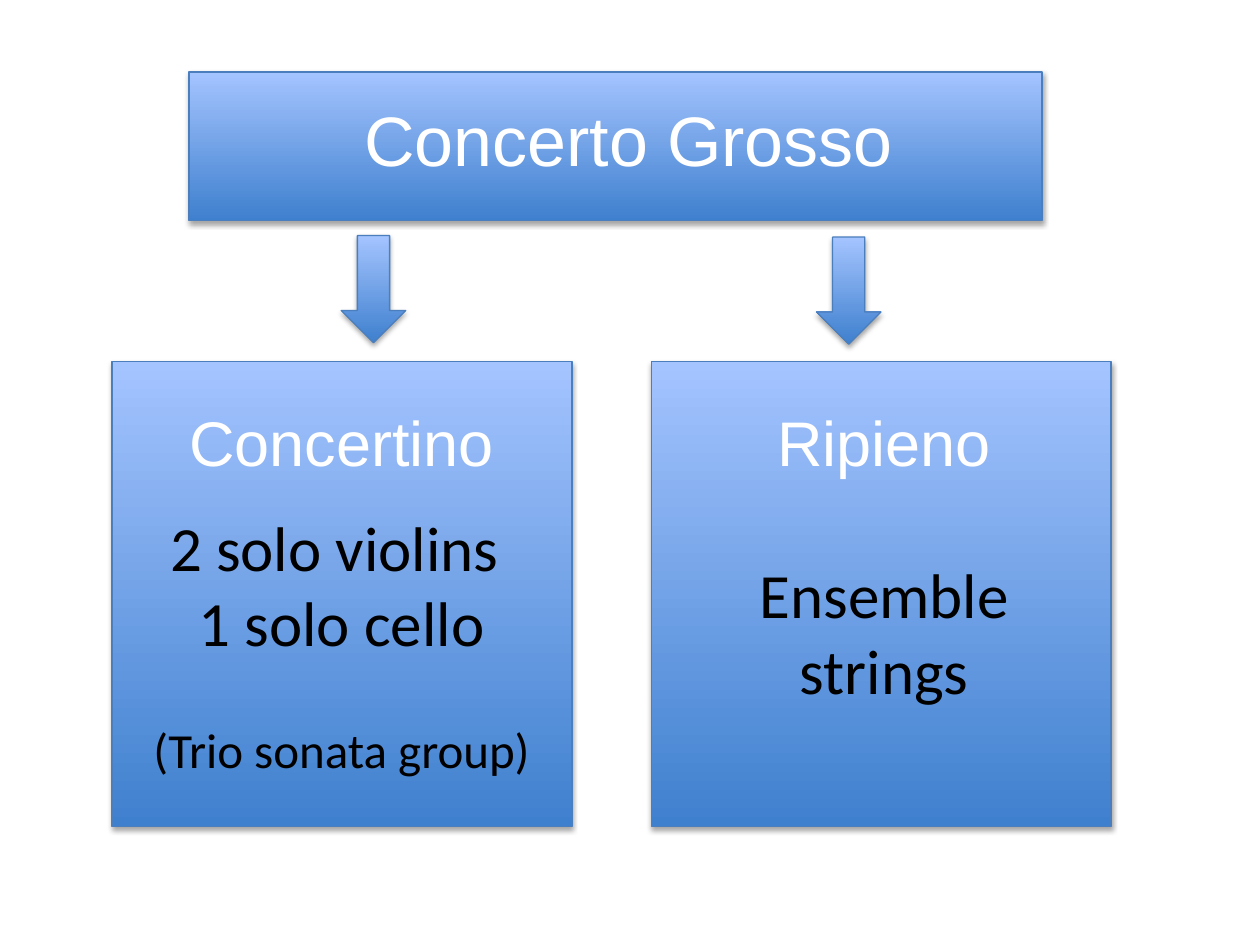
from dataclasses import dataclass

from lxml.etree import SubElement
from pptx import Presentation
from pptx.dml.color import RGBColor
from pptx.enum.shapes import MSO_SHAPE
from pptx.enum.text import MSO_AUTO_SIZE, PP_ALIGN
from pptx.oxml.ns import qn
from pptx.util import Cm, Pt


@dataclass(frozen=True)
class Theme:
    dark: RGBColor = RGBColor.from_string("3F80CE")
    light: RGBColor = RGBColor.from_string("A4C4FF")
    edge: RGBColor = RGBColor.from_string("4B7EBC")
    white: RGBColor = RGBColor.from_string("FFFFFF")
    black: RGBColor = RGBColor.from_string("000000")
    heading: str = "Arial"
    body: str = "Calibri"
    title_size: int = 40
    text_size: int = 36
    note_size: int = 28


theme = Theme()


def add_block(s, kind, left, top, width, height):
    sp = s.shapes.add_shape(kind, Cm(left), Cm(top), Cm(width), Cm(height))
    sp.fill.gradient()
    sp.fill.gradient_angle = 90
    for stop, color in zip(sp.fill.gradient_stops, (theme.dark, theme.light)):
        stop.color.rgb = color
    sp.line.color.rgb = theme.edge
    sp.line.width = Pt(0.75)
    sp.shadow.inherit = False
    effects = sp._element.spPr.find(qn("a:effectLst"))
    shadow = SubElement(effects, qn("a:outerShdw"), blurRad=str(Pt(3.1)),
                        dist=str(Pt(1.8)), dir="5400000", rotWithShape="0")
    color = SubElement(shadow, qn("a:srgbClr"), val=str(theme.black))
    SubElement(color, qn("a:alpha"), val="35000")


def add_text(s, left, top, width, height, lines):
    tf = s.shapes.add_textbox(Cm(left), Cm(top), Cm(width), Cm(height)).text_frame
    tf.word_wrap = True
    tf.auto_size = MSO_AUTO_SIZE.SHAPE_TO_FIT_TEXT
    for i, (text, font, size, color, gap) in enumerate(lines):
        p = tf.add_paragraph() if i else tf.paragraphs[0]
        p.text = text
        p.alignment = PP_ALIGN.CENTER
        p.font.name = font
        p.font.size = Pt(size)
        p.font.color.rgb = color
        if gap:
            p.space_before = Pt(gap)


prs = Presentation()
prs.slide_width, prs.slide_height = Cm(25.4), Cm(19.05)
s = prs.slides.add_slide(prs.slide_layouts[6])

add_block(s, MSO_SHAPE.RECTANGLE, 3.81, 1.45, 17.2, 3)
add_text(s, 4.72, 1.83, 15.9, 1.96,
         [("Concerto Grosso", theme.heading, theme.title_size, theme.white, 0)])

groups = [
    (2.26, 2.34, 9.4, "Concertino", [
        ("2 solo violins ", theme.text_size, 17),
        ("1 solo cello", theme.text_size, 0),
        ("(Trio sonata group)", theme.note_size, 34),
    ]),
    (13.13, 13.28, 7.95, "Ripieno", [("Ensemble strings", theme.text_size, 44)]),
]
for panel_left, text_left, text_height, heading, players in groups:
    add_block(s, MSO_SHAPE.RECTANGLE, panel_left, 7.29, 9.27, 9.37)
    lines = [(heading, theme.heading, theme.text_size, theme.white, 0)]
    lines += [(text, theme.body, size, theme.black, gap) for text, size, gap in players]
    add_text(s, text_left, 8, 9.09, text_height, lines)

for left, top in ((6.88, 4.75), (16.46, 4.78)):
    add_block(s, MSO_SHAPE.DOWN_ARROW, left, top, 1.3, 2.16)

prs.save("out.pptx")
